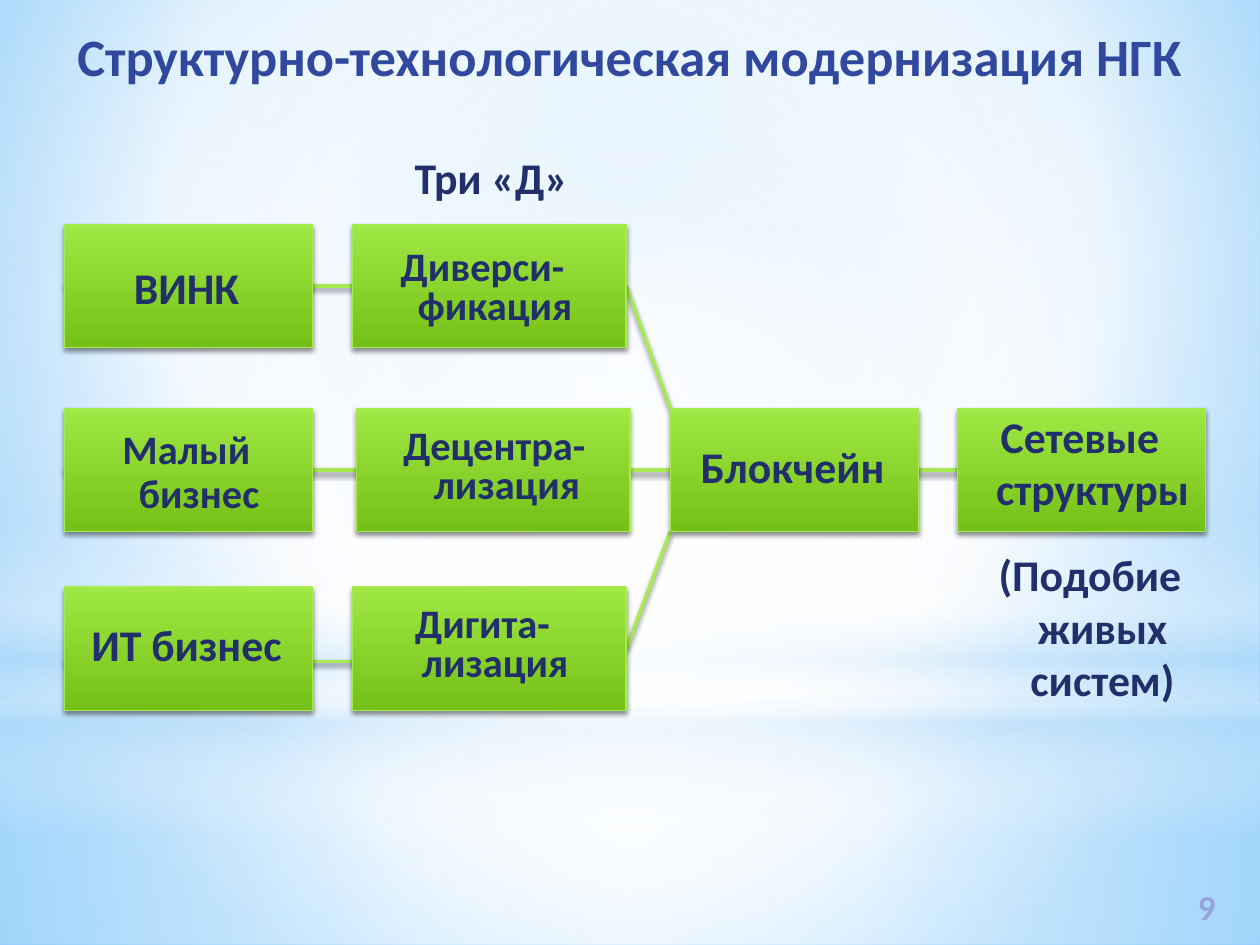
import pptx
import pptx.util
from lxml import etree
from pptx.dml.color import RGBColor
from pptx.enum.shapes import MSO_CONNECTOR, MSO_SHAPE
from pptx.enum.text import MSO_ANCHOR, MSO_AUTO_SIZE, PP_ALIGN
from pptx.oxml.ns import qn

# The slide is a grid of 10 columns by 7.5 rows
COLS, ROWS = 10, 7.5
UNIT = pptx.util.Inches(1)

WHITE = RGBColor(0xFF, 0xFF, 0xFF)
BLACK = RGBColor(0, 0, 0)
SKY = RGBColor(0x9E, 0xD5, 0xFF)
BLUE = RGBColor(0x5B, 0xB9, 0xFF)
MIST = RGBColor(0xB4, 0xDC, 0xFA)
LIME = RGBColor(0xA7, 0xEA, 0x52)
LIGHT = RGBColor(0xA0, 0xE8, 0x44)
LEAF = RGBColor(0x75, 0xC0, 0x16)
NAVY = RGBColor(0x21, 0x30, 0x6A)
ROYAL = RGBColor(0x31, 0x48, 0x9F)
LILAC = RGBColor(0x95, 0xA4, 0xDE)
FONT = "Calibri"
CENTER = (50, 50, 50, 50)


def grid(*vals):
    return [round(v * UNIT) for v in vals]


def sub(node, tag, **attrs):
    return etree.SubElement(node, qn(tag), {k: str(v) for k, v in attrs.items()})


def tint(node, color, alpha):
    clr = sub(node, "a:srgbClr", val=color)
    if alpha < 100:
        sub(clr, "a:alpha", val=alpha * 1000)


def fade(fill, root, stops, focus=None):
    """Gradient fill: round about focus, or from top to bottom."""
    fill.solid()
    old = root.find(qn("a:solidFill"))
    new = etree.Element(qn("a:gradFill"), rotWithShape="1")
    row = sub(new, "a:gsLst")
    for pos, color, alpha in stops:
        tint(sub(row, "a:gs", pos=pos * 1000), color, alpha)
    if focus:
        path = sub(new, "a:path", path="circle")
        sub(path, "a:fillToRect", **{k: v * 1000 for k, v in zip("ltrb", focus)})
    else:
        sub(new, "a:lin", ang=90 * 60000, scaled=0)
    root.replace(old, new)


def shade(props):
    """Soft shadow below a card or a link."""
    for old in props.findall(qn("a:effectLst")):
        props.remove(old)
    drop = sub(sub(props, "a:effectLst"), "a:outerShdw",
               blurRad=pptx.util.Pt(3.1), dist=pptx.util.Pt(1.8),
               dir=90 * 60000, rotWithShape=0)
    tint(drop, BLACK, 45)


def write(shape, text, size=25, color=NAVY, align=PP_ALIGN.CENTER,
          lines=None, after=None, hang=False, wrap=True):
    frame = shape.text_frame
    frame.word_wrap = wrap
    frame.auto_size = MSO_AUTO_SIZE.NONE
    frame.vertical_anchor = MSO_ANCHOR.TOP
    par = frame.paragraphs[0]
    par.alignment = align
    if lines:
        par.line_spacing = lines
    if after:
        par.space_after = pptx.util.Pt(after)
    if hang:
        props = par._p.get_or_add_pPr()
        props.set("marL", str(pptx.util.Inches(0.25)))
        props.set("indent", str(pptx.util.Inches(-0.2)))
    run = par.add_run()
    run.text = text
    run.font.name = FONT
    run.font.size = pptx.util.Pt(size)
    run.font.bold = True
    run.font.color.rgb = color


def label(slide, box, text, **form):
    write(slide.shapes.add_textbox(*grid(*box)), text, **form)


def scene(slide, box):
    """Sky, ground, band of haze and central glow."""
    left, top, width, height = box
    root = slide.background.fill
    props = None
    root.solid()
    props = slide._element.find(".//" + qn("p:bgPr"))
    fade(root, props, [(0, SKY, 100), (60, WHITE, 100), (100, BLUE, 100)],
         (20, 10, 20, 60))
    rect, oval = MSO_SHAPE.RECTANGLE, MSO_SHAPE.OVAL
    split = 5.58
    layers = [
        (rect, split, height - split,
         [(0, WHITE, 91), (37, WHITE, 76), (100, MIST, 79)], CENTER),
        (rect, 0, split,
         [(0, WHITE, 89), (48, WHITE, 62), (100, MIST, 79)], CENTER),
        (rect, 4.12, 2.5,
         [(0, WHITE, 0), (29, WHITE, 30), (45, MIST, 40), (55, WHITE, 26),
          (65, MIST, 60), (100, WHITE, 0)], None),
        (oval, 1.75, split, [(0, WHITE, 100), (56, WHITE, 0)], CENTER),
    ]
    for kind, y, tall, stops, focus in layers:
        shape = slide.shapes.add_shape(kind, *grid(left, top + y, width, tall))
        shape.shadow.inherit = False
        fade(shape.fill, shape._element.spPr, stops, focus)
        shape.line.fill.background()


def link(slide, start, end):
    line = slide.shapes.add_connector(MSO_CONNECTOR.STRAIGHT, *grid(*start, *end))
    line.line.color.rgb = LIME
    line.line.width = pptx.util.Pt(2)
    shade(line._element.spPr)


def card(slide, box):
    shape = slide.shapes.add_shape(MSO_SHAPE.RECTANGLE, *grid(*box))
    fade(shape.fill, shape._element.spPr, [(0, LIGHT, 100), (100, LEAF, 100)])
    shape.line.color.rgb = LIME
    shape.line.width = pptx.util.Pt(0.75)
    shade(shape._element.spPr)


def flow(slide, box):
    """Three rows of cards which meet in one chain."""
    left, top, width, height = box
    slim, wide, tall = 1.97, 2.17, 0.98
    first, second, hub, last = (left + c for c in (0, 2.29, 4.81, 7.09))
    high, mid, low = (top + r for r in (0.63, 2.09, 3.51))

    # Links lie behind the cards
    link(slide, (hub, mid), (second + wide, high + tall / 2))
    link(slide, (second + wide, low + tall / 2), (hub, mid + tall))
    for y, end in ((low + 0.59, 4.41), (mid + tall / 2, 8.19),
                   (high + tall / 2, 4.37)):
        link(slide, (left, y), (left + end, y))

    # Card: left, top, width; text: x and y shift, size, line spacing
    cards = [
        (first, high, slim, "ВИНК", -0.08, 0.24, 25, None),
        (first, mid, slim, "Малый бизнес", -0.08, 0.12, 23.1, 0.9),
        (first, low, slim, "ИТ бизнес", -0.08, 0.19, 25, None),
        (second, high, wide, "Диверси-фикация", -0.08, 0.16, 23.1, 0.8),
        (second + 0.03, mid, wide, "Децентра-лизация", -0.03, 0.12, 23.1, 0.8),
        (second, low, wide, "Дигита-лизация", -0.08, 0.11, 23.1, 0.8),
        (hub, mid, slim, "Блокчейн", -0.08, 0.2, 25, None),
        (last, mid, slim, "Сетевые структуры", -0.08, -0.04, 25, None),
    ]
    for x, y, w, text, dx, dy, size, lines in cards:
        card(slide, (x, y, w, tall))
        span = w - dx if w == slim or dx > -0.08 else w
        label(slide, (x + dx, y + dy, span, 0.79), text, size=size,
              lines=lines, after=3, hang=True)

    # Captions above the second column and below the last card
    label(slide, (second + 0.05, top, 2.05, 0.79), "Три «Д»", after=3, hang=True)
    label(slide, (last, top + 3.15, 2.05, 1.26), "(Подобие живых систем)",
          after=3, hang=True)


def head(slide, box):
    title = slide.shapes.title
    title.left, title.top, title.width, title.height = grid(*box)
    write(title, "Структурно-технологическая модернизация НГК",
          size=30, color=ROYAL)


def main():
    deck = pptx.Presentation()
    deck.slide_width, deck.slide_height = grid(COLS, ROWS)
    slide = deck.slides.add_slide(deck.slide_layouts[5])
    scene(slide, (0, 0, COLS, ROWS))
    # Bring the title in front of the scene
    slide.shapes._spTree.append(slide.shapes.title._element)
    head(slide, (0, 0.14, COLS, 0.86))
    flow(slide, (0.51, 1.15, 9.14, 4.49))
    label(slide, (9.41, 6.98, 0.47, 0.44), "9", size=20, color=LILAC,
          align=PP_ALIGN.LEFT, wrap=False)
    deck.save("out.pptx")


if __name__ == "__main__":
    main()
